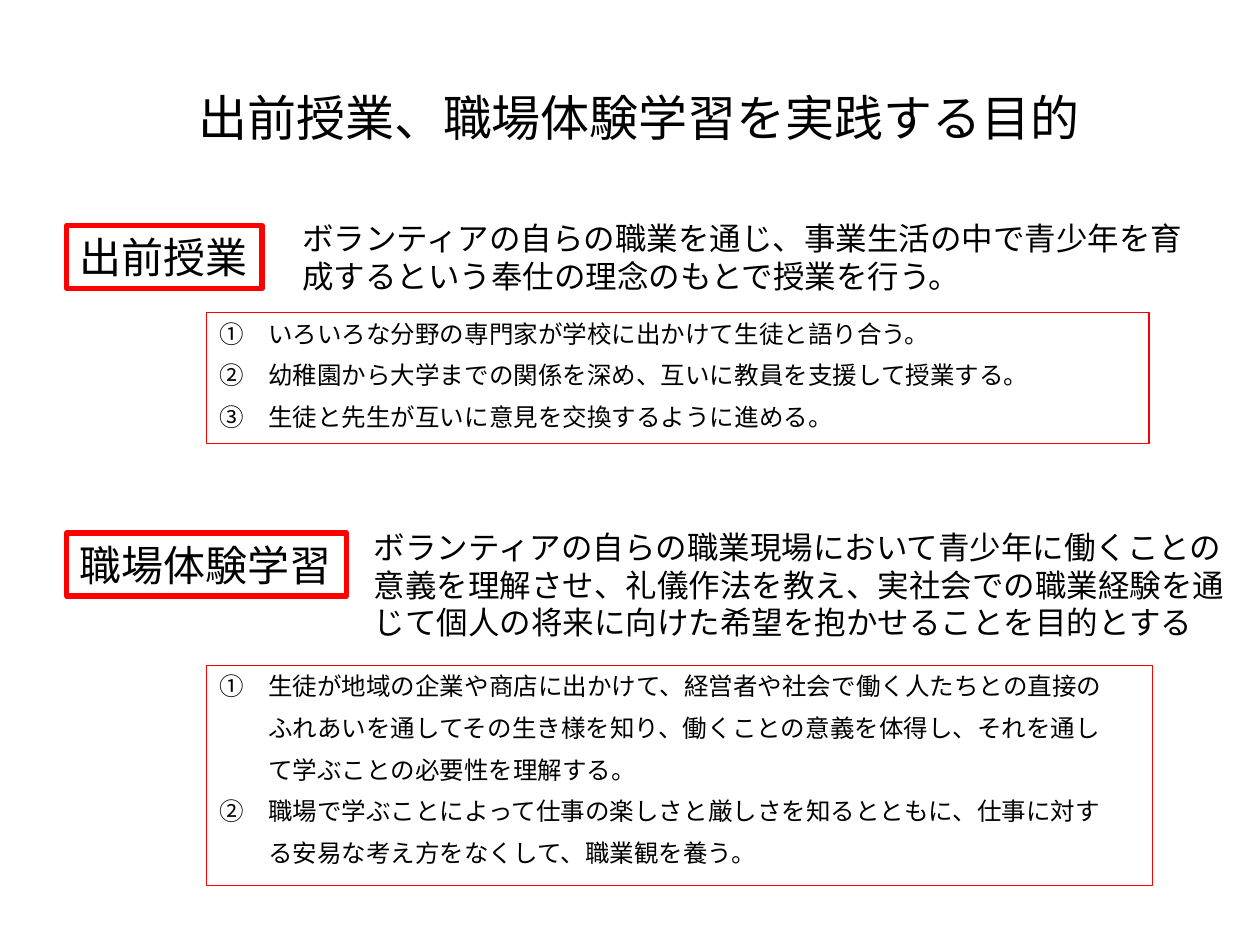
"""Build a slide on the aims of visiting lessons and workplace learning."""
from dataclasses import dataclass

from lxml import etree
from pptx import Presentation
from pptx import util as u
from pptx.dml.color import RGBColor
from pptx.enum import shapes, text
from pptx.oxml.ns import qn

BLACK = RGBColor(0x00, 0x00, 0x00)
RED = RGBColor(0xFF, 0x00, 0x00)
FONT = "Noto Sans CJK JP"
MARKERS = "①②③"
LEFT = text.PP_ALIGN.LEFT
TOP = text.MSO_ANCHOR.TOP


@dataclass(frozen=True)
class Block:
    """Text lines in a box, with a red border when border is above zero."""

    left: float
    top: float
    width: float
    height: float
    lines: tuple[str, ...]
    size: float
    border: float = 0
    wrap: bool = True
    align: text.PP_ALIGN = LEFT
    anchor: text.MSO_ANCHOR = TOP


BLOCKS = (
    Block(2.3, 1.69, 7.2, 0.71,
          ("ボランティアの自らの職業を通じ、事業生活の中で青少年を育成するという奉仕の理念のもとで授業を行う。",), 18),
    Block(0.43, 0.17, 9.28, 1.51, ("出前授業、職場体験学習を実践する目的",), 28,
          align=text.PP_ALIGN.CENTER, anchor=text.MSO_ANCHOR.MIDDLE),
    Block(0.53, 1.79, 1.55, 0.5, ("出前授業",), 24, border=3, wrap=False),
    Block(2.87, 4.14, 7.13, 1.01,
          ("ボランティアの自らの職業現場において青少年に働くことの意義を理解させ、礼儀作法を教え、"
           "実社会での職業経験を通じて個人の将来に向けた希望を抱かせることを目的とする",), 18),
    Block(1.64, 2.48, 7.48, 1.04,
          ("①　いろいろな分野の専門家が学校に出かけて生徒と語り合う。",
           "②　幼稚園から大学までの関係を深め、互いに教員を支援して授業する。",
           "③　生徒と先生が互いに意見を交換するように進める。"), 14, border=0.75),
    Block(0.53, 4.23, 2.22, 0.5, ("職場体験学習",), 24, border=3, wrap=False),
    Block(1.64, 5.28, 7.51, 1.75,
          ("①　生徒が地域の企業や商店に出かけて、経営者や社会で働く人たちとの直接の",
           "ふれあいを通してその生き様を知り、働くことの意義を体得し、それを通し",
           "て学ぶことの必要性を理解する。",
           "②　職場で学ぶことによって仕事の楽しさと厳しさを知るとともに、仕事に対す",
           "る安易な考え方をなくして、職業観を養う。"), 14, border=0.75),
)


def set_attributes(target: object, values: dict[str, object]) -> None:
    """Set each named attribute on the target."""
    for name, value in values.items():
        setattr(target, name, value)


def add_line(paragraph, line: str, block: Block, first: bool) -> None:
    """Write one line, indenting those that continue a numbered item."""
    set_attributes(paragraph, {
        "alignment": block.align,
        "space_before": u.Pt(0 if first else block.size / 2),
    })
    if len(block.lines) > 1 and line[0] not in MARKERS:
        paragraph._p.get_or_add_pPr().set("marL", str(u.Pt(2 * block.size)))
    run = paragraph.add_run()
    run.text = line
    run.font.color.rgb = BLACK
    set_attributes(run.font, {"size": u.Pt(block.size), "name": FONT})
    east_asian = etree.SubElement(run._r.get_or_add_rPr(), qn("a:ea"))
    east_asian.set("typeface", FONT)


def add_block(slide, block: Block) -> None:
    """Draw a block as a bordered rectangle or a plain text box."""
    place = [u.Inches(value) for value in (block.left, block.top, block.width, block.height)]
    if block.border:
        shape = slide.shapes.add_shape(shapes.MSO_SHAPE.RECTANGLE, *place)
        shape.shadow.inherit = False
        shape.fill.background()
        shape.line.color.rgb = RED
        shape.line.width = u.Pt(block.border)
    else:
        shape = slide.shapes.add_textbox(*place)
    frame = shape.text_frame
    set_attributes(frame, {"word_wrap": block.wrap, "vertical_anchor": block.anchor})
    for index, line in enumerate(block.lines):
        paragraph = frame.add_paragraph() if index else frame.paragraphs[0]
        add_line(paragraph, line, block, first=index == 0)


def main() -> None:
    """Create and save the presentation."""
    presentation = Presentation()
    set_attributes(presentation, {"slide_width": u.Inches(10), "slide_height": u.Inches(7.5)})
    slide = presentation.slides.add_slide(presentation.slide_layouts[6])
    for block in BLOCKS:
        add_block(slide, block)
    presentation.save("out.pptx")


if __name__ == "__main__":
    main()
